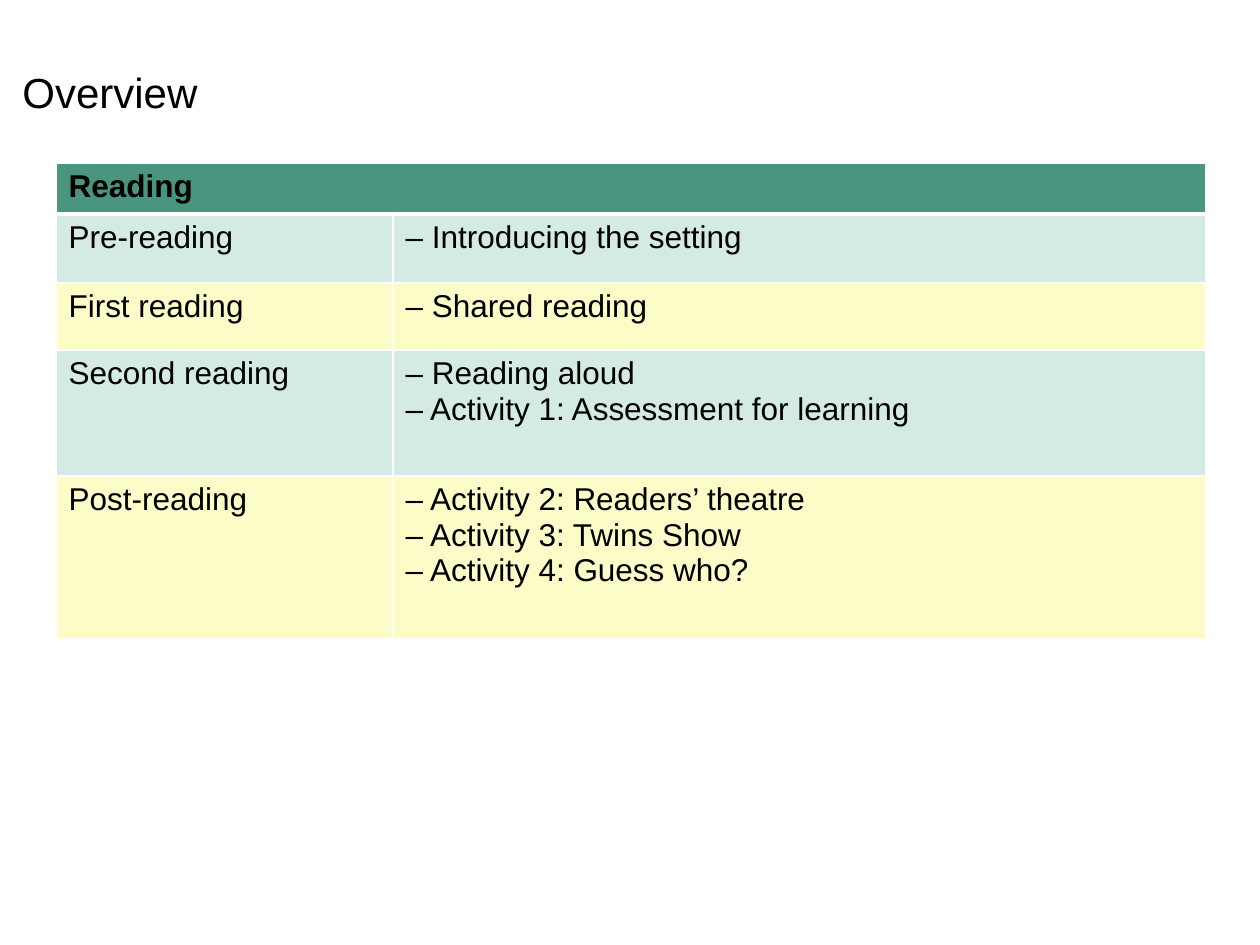
import pptx
import pptx.util
import pptx.dml.color
import pptx.enum.text
import pptx.oxml

RGB = pptx.dml.color.RGBColor
BLACK = RGB(0x00, 0x00, 0x00)
WHITE = RGB(0xFF, 0xFF, 0xFF)
GREEN = RGB(0x49, 0x95, 0x80)
MINT = RGB(0xD4, 0xEA, 0xE4)
CREAM = RGB(0xFB, 0xFC, 0xC8)

NS = "http://schemas.openxmlformats.org/drawingml/2006/main"
SCALE = 914400 / 126
COLS = (337, 813)
ROWS = (51, 69, 67, 126, 163)
STEPS = (
    ("Pre-reading", "– Introducing the setting"),
    ("First reading", "– Shared reading"),
    ("Second reading", "– Reading aloud\n– Activity 1: Assessment for learning"),
    ("Post-reading", "– Activity 2: Readers’ theatre\n– Activity 3: Twins Show\n"
                     "– Activity 4: Guess who?"),
)


def px(num):
    return pptx.util.Emu(round(num * SCALE))


def write(frame, text, size, bold=False):
    frame.text = text
    form = {"name": "Arial", "size": pptx.util.Pt(size), "bold": bold}
    for para in frame.paragraphs:
        for key, val in form.items():
            setattr(para.font, key, val)
        para.font.color.rgb = BLACK


def edge(cell, **sides):
    """Draw white cell borders; sides maps L, R, T, B to widths in points."""
    props = cell._tc.get_or_add_tcPr()
    for side, width in sides.items():
        props.append(pptx.oxml.parse_xml(
            f'<a:ln{side} xmlns:a="{NS}" w="{pptx.util.Pt(width)}"><a:solidFill>'
            f'<a:srgbClr val="{WHITE}"/></a:solidFill></a:ln{side}>'))


def title(slide, box):
    frame = slide.shapes.add_textbox(*map(px, box)).text_frame
    frame.word_wrap = False
    frame.auto_size = pptx.enum.text.MSO_AUTO_SIZE.SHAPE_TO_FIT_TEXT
    write(frame, "Overview", 24)


def plan(slide, left, top):
    box = (left, top, sum(COLS), sum(ROWS))
    table = slide.shapes.add_table(len(ROWS), len(COLS), *map(px, box)).table
    for col, width in zip(table.columns, COLS):
        col.width = px(width)
    for row, height in zip(table.rows, ROWS):
        row.height = px(height)
    table.cell(0, 0).merge(table.cell(0, 1))
    for r, texts in enumerate((("Reading", ""),) + STEPS):
        head = r == 0
        fill = GREEN if head else (CREAM, MINT)[r % 2]
        for cell, text in zip(table.rows[r].cells, texts):
            edge(cell, L=1, R=1, T=3 if r == 1 else 1, B=3 if head else 1)
            cell.fill.solid()
            cell.fill.fore_color.rgb = fill
            if not cell.is_spanned:
                write(cell.text_frame, text, 18, head)


def main():
    deck = pptx.Presentation()
    deck.slide_width, deck.slide_height = px(1260), px(945)
    slide = deck.slides.add_slide(deck.slide_layouts[6])
    title(slide, (10, 60, 203, 63))
    plan(slide, 56, 163)
    deck.save("out.pptx")


if __name__ == "__main__":
    main()
